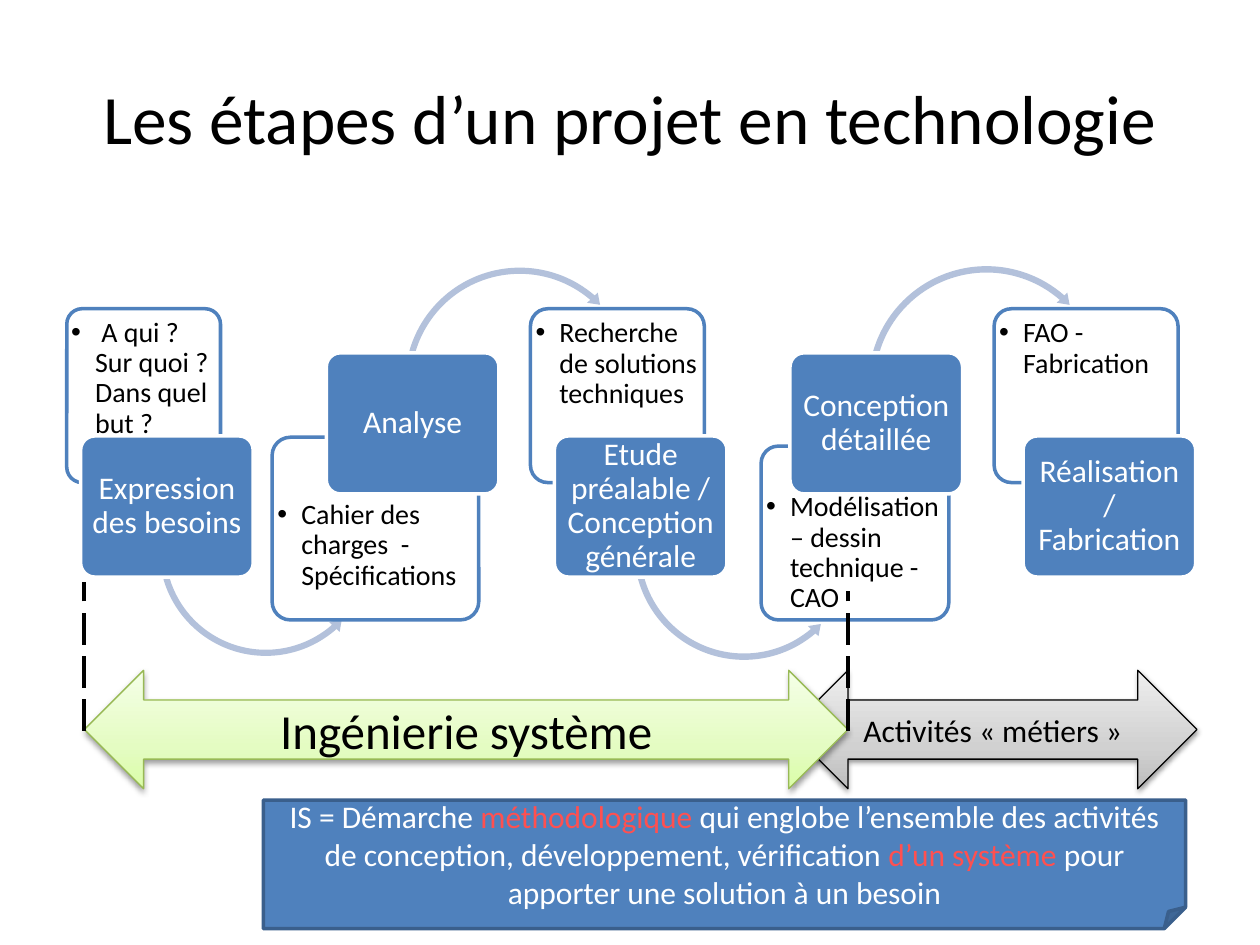
import typing
from dataclasses import dataclass

import pptx
import pptx.dml.color
import pptx.enum.dml
import pptx.enum.shapes
import pptx.enum.text
import pptx.oxml
import pptx.oxml.ns
import pptx.util

SHAPE = pptx.enum.shapes.MSO_SHAPE
ANCHOR = pptx.enum.text.MSO_ANCHOR
ALIGN = pptx.enum.text.PP_ALIGN
COLORS = {
    "white": "FFFFFF", "black": "000000", "blue": "4F81BD", "navy": "3A5F8C",
    "pale": "B3C1DB", "green": "98B955", "red": "FF5050",
}
COLUMNS, ROWS = 100, 75
CELL = pptx.util.Inches(0.1)
HIGH_STEP, LOW_STEP, HIGH_NOTE = 28, 34.6, 24.5
STEP_WIDTH, STEP_HEIGHT = 13.7, 11.2
STEP_INSETS, NOTE_INDENT = (0.4, 0.3, 0.4, 0.3), 1.9
DEFAULT_INSETS = (1, 0.5, 1, 0.5)


class Box(typing.NamedTuple):
    """Left, top, width and height in grid cells."""
    left: float
    top: float
    width: float
    height: float


@dataclass
class Turn:
    """Curved arrow leading to the next step."""
    left: float
    top: float
    size: float
    kind: typing.Any
    adjustments: tuple


@dataclass
class Step:
    label: str
    left: float
    top: float
    note: str
    note_box: Box
    note_inset: float = 0.4
    turn: typing.Optional[Turn] = None


STEPS = [
    Step("Expression des besoins", 6.4, LOW_STEP, " A qui ? Sur quoi ? Dans quel but ?",
         Box(5.3, HIGH_NOTE, 12.2, 13.8),
         turn=Turn(12.3, 34.8, 17.6, SHAPE.LEFT_CIRCULAR_ARROW,
                   (0.028, 3.467, 29.144, 98.166, 0.033))),
    Step("Analyse", 25.9, HIGH_STEP, "Cahier des charges  - Spécifications",
         Box(21.6, 34.7, 16.4, 14.5), 4.6,
         Turn(31.8, 20.9, 18.9, SHAPE.CIRCULAR_ARROW,
              (0.026, 3.211, 186.379, 117.1, 0.031))),
    Step("Etude préalable / Conception générale", 44, LOW_STEP,
         "Recherche de solutions techniques", Box(42.1, HIGH_NOTE, 13.8, 13.8),
         turn=Turn(50, 34.6, 18.1, SHAPE.LEFT_CIRCULAR_ARROW,
                   (0.028, 3.364, 29.731, 98.857, 0.032))),
    Step("Conception détaillée", 62.7, HIGH_STEP, "Modélisation – dessin technique - CAO",
         Box(60.4, 35.4, 14.9, 13.8), 3.3,
         Turn(68.6, 20.8, 19.4, SHAPE.CIRCULAR_ARROW,
              (0.026, 3.127, 186.666, 117.304, 0.03))),
    Step("Réalisation / Fabrication", 81.2, LOW_STEP, "FAO - Fabrication",
         Box(78.9, HIGH_NOTE, 14.6, 13.8)),
]
GRAY_STOPS = ((0, "BDBDBD"), (35, "D1D1D1"), (100, "EEEEEE"))
GREEN_STOPS = ((0, "DAFDA7"), (35, "E4FCC2"), (100, "F5FFE7"))
DEFINITION = [
    ("IS = Démarche ", "white"),
    ("méthodologique", "red"),
    (" qui englobe l’ensemble des activités de conception, "
     "développement, vérification ", "white"),
    ("d’un système ", "red"),
    ("pour apporter une solution à un besoin", "white"),
]


def cells(count: float) -> int:
    return round(count * CELL)


def rgb(name: str) -> pptx.dml.color.RGBColor:
    return pptx.dml.color.RGBColor.from_string(COLORS[name])


def add_xml(parent, tag: str, **attributes):
    child = pptx.oxml.ns.qn(tag)
    element = parent.makeelement(child, {key: str(value) for key, value in attributes.items()})
    parent.append(element)
    return element


def set_fill(shape, color: str, opacity: int = 100) -> None:
    shape.fill.solid()
    shape.fill.fore_color.rgb = rgb(color)
    if opacity < 100:
        solid = shape.fill._xPr.find(pptx.oxml.ns.qn("a:solidFill"))
        add_xml(solid[0], "a:alpha", val=opacity * 1000)


def set_line(line, color: str, width: float) -> None:
    line.color.rgb = rgb(color)
    line.width = pptx.util.Pt(width)


def add_box(slide, kind, box: Box, adjustments: tuple = ()):
    shape = slide.shapes.add_shape(kind, *map(cells, box))
    shape.shadow.inherit = False
    for index, value in enumerate(adjustments):
        shape.adjustments[index] = value
    return shape


def write(shape, runs: list, size: float, insets: tuple = DEFAULT_INSETS,
          anchor=ANCHOR.MIDDLE, align=ALIGN.CENTER, spacing: float = 1.0,
          bullet: bool = False) -> None:
    """Put one paragraph of (text, colour) runs in a shape."""
    frame = shape.text_frame
    left, top, right, bottom = map(cells, insets)
    frame_format = {
        "word_wrap": True, "auto_size": pptx.enum.text.MSO_AUTO_SIZE.NONE,
        "vertical_anchor": anchor, "margin_left": left, "margin_top": top,
        "margin_right": right, "margin_bottom": bottom,
    }
    for name, value in frame_format.items():
        setattr(frame, name, value)
    paragraph = frame.paragraphs[0]
    paragraph.alignment, paragraph.line_spacing = align, spacing
    if bullet:
        properties = paragraph._p.get_or_add_pPr()
        properties.set("marL", str(cells(NOTE_INDENT)))
        properties.set("indent", str(-cells(NOTE_INDENT)))
        add_xml(properties, "a:buFont", typeface="Arial")
        add_xml(properties, "a:buChar", char="•")
    for text, color in runs:
        run = paragraph.add_run()
        run.text = text
        run.font.color.rgb = rgb(color)
        for name, value in {"name": "Calibri", "size": pptx.util.Pt(size)}.items():
            setattr(run.font, name, value)


def draw_step(slide, step: Step) -> None:
    note = add_box(slide, SHAPE.ROUNDED_RECTANGLE, step.note_box, (0.1,))
    set_fill(note, "white", 90)
    set_line(note.line, "blue", 2)
    write(note, [(step.note, "black")], 16, (0, step.note_inset, 0, 0.4),
          ANCHOR.TOP, ALIGN.LEFT, 0.9, True)
    if step.turn:
        turn = step.turn
        arrow = add_box(slide, turn.kind, Box(turn.left, turn.top, turn.size, turn.size),
                        turn.adjustments)
        set_fill(arrow, "pale")
        arrow.line.fill.background()
    label = add_box(slide, SHAPE.ROUNDED_RECTANGLE,
                    Box(step.left, step.top, STEP_WIDTH, STEP_HEIGHT), (0.1,))
    set_fill(label, "blue")
    set_line(label.line, "white", 2)
    write(label, [(step.label, "white")], 18, STEP_INSETS, spacing=0.9)


def draw_phase(slide, text: str, box: Box, stops: tuple, outline: str, size: float) -> None:
    """Double arrow with a vertical gradient and a soft shadow."""
    phase = add_box(slide, SHAPE.LEFT_RIGHT_ARROW, box)
    phase.fill.gradient()
    phase.fill.gradient_angle = 90
    stop_list = phase._element.spPr.find(".//" + pptx.oxml.ns.qn("a:gsLst"))
    for stop in list(stop_list):
        stop_list.remove(stop)
    for position, color in stops:
        add_xml(add_xml(stop_list, "a:gs", pos=position * 1000), "a:srgbClr", val=color)
    set_line(phase.line, outline, 0.75)
    effects = phase._element.spPr.find(pptx.oxml.ns.qn("a:effectLst"))
    shadow = add_xml(effects, "a:outerShdw", blurRad=pptx.util.Pt(3.1),
                     dist=pptx.util.Pt(1.6), dir=5400000, rotWithShape=0)
    add_xml(add_xml(shadow, "a:srgbClr", val=COLORS["black"]), "a:alpha", val=38000)
    write(phase, [(text, "black")], size)


def draw_limit(slide, column: float, bottom: float, top: float) -> None:
    limit = slide.shapes.add_connector(pptx.enum.shapes.MSO_CONNECTOR.STRAIGHT,
                                       *map(cells, (column, bottom, column, top)))
    set_line(limit.line, "black", 2.25)
    limit.line.dash_style = pptx.enum.dml.MSO_LINE.LONG_DASH
    add_xml(limit._element.spPr, "a:effectLst")


def main() -> None:
    deck = pptx.Presentation()
    deck.slide_width, deck.slide_height = COLUMNS * CELL, ROWS * CELL
    slide = deck.slides.add_slide(deck.slide_layouts[5])
    title = slide.shapes.title
    for name, value in zip(("left", "top", "width", "height"), Box(5, 3, 90, 12.5)):
        setattr(title, name, cells(value))
    set_fill(title, "white", 67)
    write(title, [("Les étapes d’un projet en technologie", "black")], 39.6)

    draw_phase(slide, "Activités « métiers »", Box(62.6, 53.2, 32.4, 9.4),
               GRAY_STOPS, "black", 18)
    for step in STEPS:
        draw_step(slide, step)
    system = Box(6.7, 53.2, 60.6, 9.4)
    draw_phase(slide, "Ingénierie système", system, GREEN_STOPS, "green", 28)

    definition = add_box(slide, SHAPE.FOLDED_CORNER, Box(20.9, 63.5, 73.2, 10.2))
    set_fill(definition, "blue")
    set_line(definition.line, "navy", 2)
    write(definition, DEFINITION, 18)

    draw_limit(slide, system.left, 58, 46.2)
    draw_limit(slide, system.left + system.width, 58, 46.9)
    deck.save("out.pptx")


if __name__ == "__main__":
    main()
